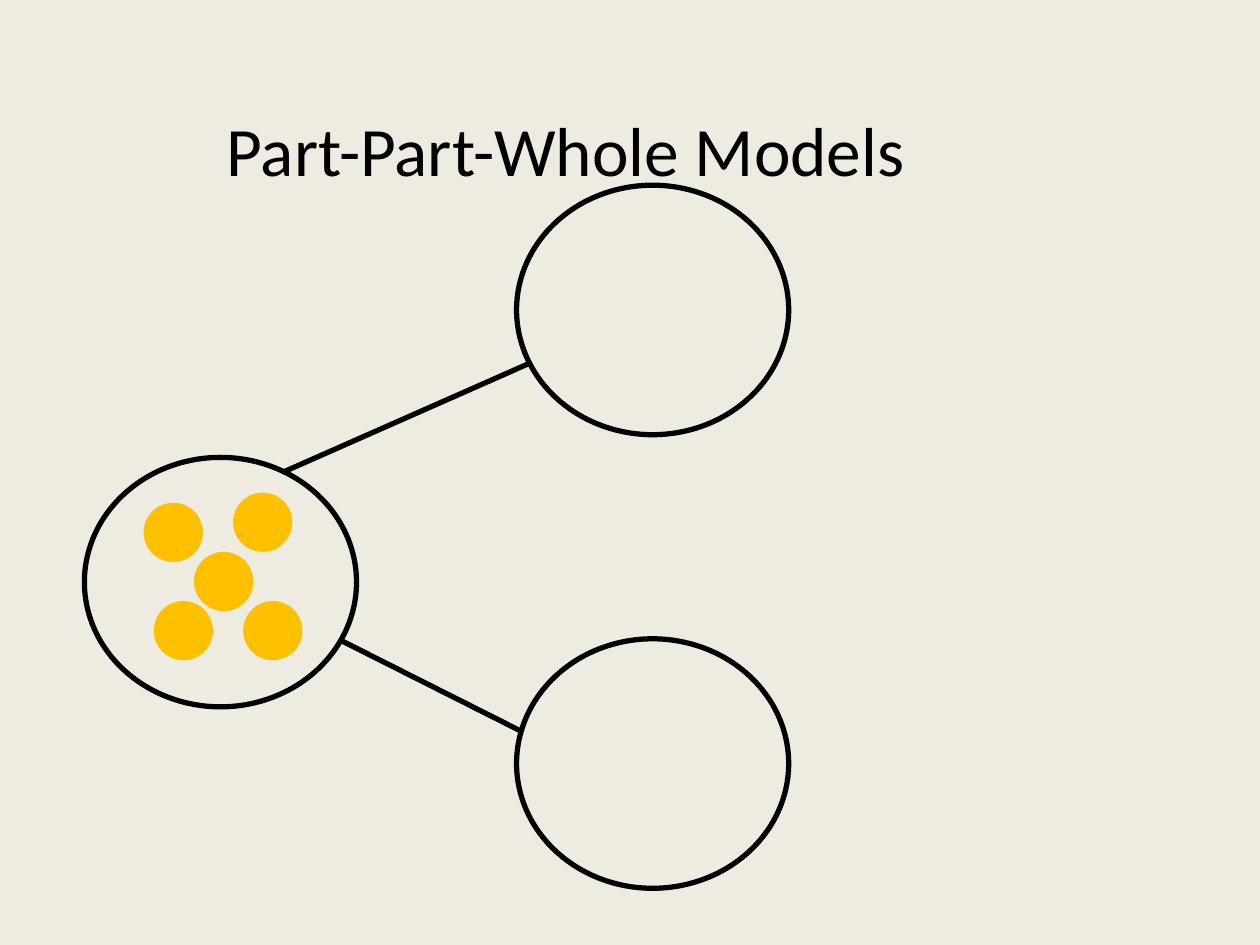
from lxml.etree import SubElement
from pptx import Presentation
from pptx.dml.color import RGBColor
from pptx.enum.shapes import MSO_CONNECTOR, MSO_SHAPE
from pptx.enum.text import MSO_ANCHOR, MSO_AUTO_SIZE, PP_ALIGN
from pptx.oxml.ns import qn
from pptx.util import Inches, Pt

# Content, in inches
TITLE = "Part-Part-Whole Models"
INK, COUNTER, PAPER = "000000", "FFC000", "EEECE1"
RING_SIZE = (2.16, 1.98)
DOT_SIZE = (0.47, 0.47)
RINGS = [(4.1, 5.07), (4.1, 1.47), (0.67, 3.63)]  # part, part, whole
LINKS = [((4.13, 5.8), (2.72, 5.09)), ((4.21, 2.88), (2.24, 3.75))]
DOTS = [(1.14, 3.99), (1.85, 3.91), (1.22, 4.77), (1.54, 4.38), (1.93, 4.77)]


def rgb(color):
    return RGBColor.from_string(color)


def style_line(line):
    line.color.rgb = rgb(INK)
    line.width = Pt(3)


def add_oval(shapes, pos, size, fill=None):
    sp = shapes.add_shape(MSO_SHAPE.OVAL, *map(Inches, pos + size))
    sp.shadow.inherit = False
    if fill:
        sp.fill.solid()
        sp.fill.fore_color.rgb = rgb(fill)
        sp.line.fill.background()
    else:
        sp.fill.background()
        style_line(sp.line)


def add_link(shapes, start, end):
    link = shapes.add_connector(MSO_CONNECTOR.STRAIGHT, *map(Inches, start + end))
    style_line(link.line)
    SubElement(link._element.spPr, qn("a:effectLst"))


prs = Presentation()
prs.slide_width, prs.slide_height = Inches(10), Inches(7.5)
s = prs.slides.add_slide(prs.slide_layouts[5])
s.background.fill.solid()
s.background.fill.fore_color.rgb = rgb(PAPER)

# Title, set low in its box and slightly left of centre
title = s.shapes.title
title.left, title.top, title.width, title.height = map(Inches, (0.28, 0.36, 8.67, 0.98))
tf = title.text_frame
tf.auto_size = MSO_AUTO_SIZE.NONE
tf.vertical_anchor = MSO_ANCHOR.TOP
tf.margin_top, tf.margin_right = Inches(0.49), Inches(0.35)
p = tf.paragraphs[0]
p.alignment = PP_ALIGN.CENTER
r = p.add_run()
r.text = TITLE
r.font.name, r.font.size = "Calibri", Pt(39.6)
r.font.color.rgb = rgb(INK)

# Part-part-whole diagram
diagram = s.shapes.add_group_shape()
for pos in RINGS:
    add_oval(diagram.shapes, pos, RING_SIZE)
for start, end in LINKS:
    add_link(diagram.shapes, start, end)

# Counters in the whole
for pos in DOTS:
    add_oval(s.shapes, pos, DOT_SIZE, COUNTER)

prs.save("out.pptx")
